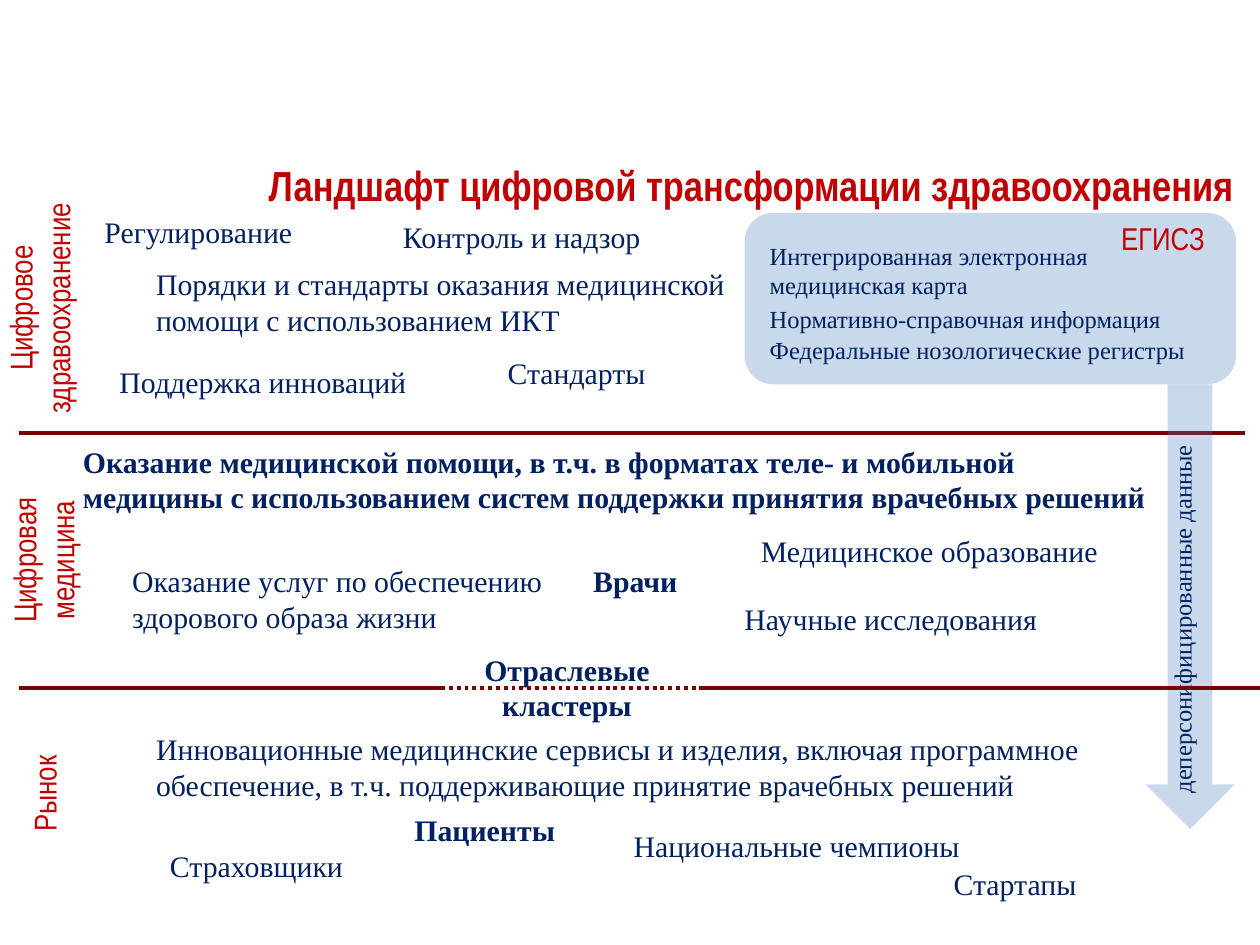
from lxml import etree
from pptx import Presentation
from pptx import util as u
from pptx.dml.color import RGBColor
from pptx.enum import dml, shapes, text
from pptx.oxml.ns import qn

RED = RGBColor(0xC0, 0x00, 0x00)
NAVY = RGBColor(0x00, 0x20, 0x60)
MAROON = RGBColor(0x76, 0x00, 0x00)
BLUE = RGBColor(0x4F, 0x81, 0xBD)
NARROW, SERIF = "Arial Narrow", "Times New Roman"

# The slide is a grid of 100 columns by 75 rows; all places are in its cells.
COLUMNS, ROWS = 100, 75
ONE_LINE, TWO_LINES = 3.9, 6.7

TITLE = "Ландшафт цифровой трансформации здравоохранения"

# Level name, middle column, middle row, length, thickness
LEVELS = [
    ("Цифровое здравоохранение", 3.15, 24.45, 19.7, 7.1),
    ("Цифровая медицина", 3.45, 44.45, 18.7, 7.1),
    ("Рынок", 3.5, 63, 18, 4),
]

# Text, left, top, width
SHORT_TOPICS = [
    ("Регулирование", 7.3, 16.5, 17.1),
    ("Контроль и надзор", 31, 16.9, 21),
    ("Стандарты", 39.3, 27.7, 13),
    ("Поддержка инноваций", 8.5, 28.4, 25),
    ("Научные исследования", 58.1, 47.2, 32.8),
    ("Медицинское образование", 59.4, 41.8, 32.8),
    ("Национальные чемпионы", 49.3, 65.2, 28.1),
    ("Стартапы", 74.7, 68.2, 11.8),
    ("Страховщики", 12.5, 66.8, 32.8),
]
LONG_TOPICS = [
    ("Порядки и стандарты оказания медицинской помощи с использованием ИКТ",
     11.4, 20.6, 49.8),
    ("Оказание услуг по обеспечению здорового образа жизни", 9.5, 44.2, 36.6),
    ("Инновационные медицинские сервисы и изделия, включая программное "
     "обеспечение, в т.ч. поддерживающие принятие врачебных решений",
     11.4, 57.5, 77.5),
]
PEOPLE = [("Врачи", 46.1, 44.2, 14.8), ("Пациенты", 31.9, 63.9, 14.8)]
CARE = ("Оказание медицинской помощи, в т.ч. в форматах теле- и мобильной медицины "
        "с использованием систем поддержки принятия врачебных решений", 5.6, 34.7, 87.5)
CLUSTERS = ("Отраслевые\vкластеры", 31.9, 51.2, 26.2)

SYSTEM = "ЕГИСЗ"
SYSTEM_PANEL = (59.1, 16.9, 39, 13.6)
SYSTEM_PARTS = [  # Text, top
    ("Интегрированная электронная медицинская карта", 18.6),
    ("Нормативно-справочная информация", 23.6),
    ("Федеральные нозологические регистры", 26.1),
]
DATA_FLOW = "деперсонифицированные данные"
DATA_ARROW = (90.9, 30.5, 7.1, 35.3)

# Row, from column, to column, dash
UPPER_DIVIDER = [(34.4, 1.5, 98.8, None)]
LOWER_DIVIDER = [
    (54.6, 1.5, 35, None),
    (54.6, 35, 55.5, dml.MSO_LINE.ROUND_DOT),
    (54.6, 55.5, 100, None),
]

prs = Presentation()
prs.slide_width, prs.slide_height = u.Inches(10), u.Inches(7.5)
slide = prs.slides.add_slide(prs.slide_layouts[6])


def place(left, top, width=0, height=0):
    """Grid cells to slide lengths."""
    cell_x, cell_y = prs.slide_width / COLUMNS, prs.slide_height / ROWS
    return (round(left * cell_x), round(top * cell_y),
            round(width * cell_x), round(height * cell_y))


def write(words, left, top, width, height, size=17, font=SERIF, color=NAVY, bold=False,
          align=text.PP_ALIGN.LEFT, anchor=text.MSO_ANCHOR.TOP, wrap=True, rotation=0):
    box = slide.shapes.add_textbox(*place(left, top, width, height))
    box.rotation = rotation
    frame = box.text_frame
    frame.word_wrap = wrap
    frame.vertical_anchor = anchor
    paragraph = frame.paragraphs[0]
    paragraph.text = words
    paragraph.alignment = align
    for run in paragraph.runs:
        run.font.size, run.font.name, run.font.bold = u.Pt(size), font, bold
        run.font.color.rgb = color


def write_upward(words, middle_x, middle_y, length, thickness, **style):
    write(words, middle_x - length / 2, middle_y - thickness / 2, length, thickness,
          rotation=270, **style)


def tint(kind, cells):
    """Add a borderless blue shape, 30 % opaque."""
    area = slide.shapes.add_shape(kind, *place(*cells))
    area.shadow.inherit = False
    area.line.fill.background()
    area.fill.solid()
    area.fill.fore_color.rgb = BLUE
    blue = area.fill._xPr.find(".//" + qn("a:srgbClr"))
    etree.SubElement(blue, qn("a:alpha"), val="30000")


def divide(segments):
    for row, start, end, dash in segments:
        x1, y, _, _ = place(start, row)
        x2 = place(end, row)[0]
        rule = slide.shapes.add_connector(shapes.MSO_CONNECTOR.STRAIGHT, x1, y, x2, y)
        rule.line.color.rgb = MAROON
        rule.line.width = u.Pt(2.25)
        if dash:
            rule.line.dash_style = dash
        etree.SubElement(rule._element.spPr, qn("a:effectLst"))


write(TITLE, 2, 11.5, 96.9, 6.3, size=24, font=NARROW, color=RED, bold=True,
      align=text.PP_ALIGN.RIGHT, anchor=text.MSO_ANCHOR.MIDDLE)
divide(UPPER_DIVIDER)
for level in LEVELS:
    write_upward(*level, size=18, font=NARROW, color=RED, align=text.PP_ALIGN.CENTER)

tint(shapes.MSO_SHAPE.ROUNDED_RECTANGLE, SYSTEM_PANEL)
write(SYSTEM, 88, SYSTEM_PANEL[1], 10.1, 3.4, size=18, font=NARROW, color=RED, wrap=False)
for part, top in SYSTEM_PARTS:
    write(part, SYSTEM_PANEL[0] + 1, top, 37.2, 4.8, size=14)

for topic in SHORT_TOPICS:
    write(*topic, ONE_LINE, wrap=False)
for topic in LONG_TOPICS:
    write(*topic, TWO_LINES)
for person in PEOPLE:
    write(*person, 3.5, bold=True)
write(*CARE, TWO_LINES, bold=True)

tint(shapes.MSO_SHAPE.DOWN_ARROW, DATA_ARROW)
write_upward(DATA_FLOW, 93.85, 45.6, 36.7, 3.4, size=14)
write(*CLUSTERS, TWO_LINES, bold=True, align=text.PP_ALIGN.CENTER)
divide(LOWER_DIVIDER)

prs.save("out.pptx")
